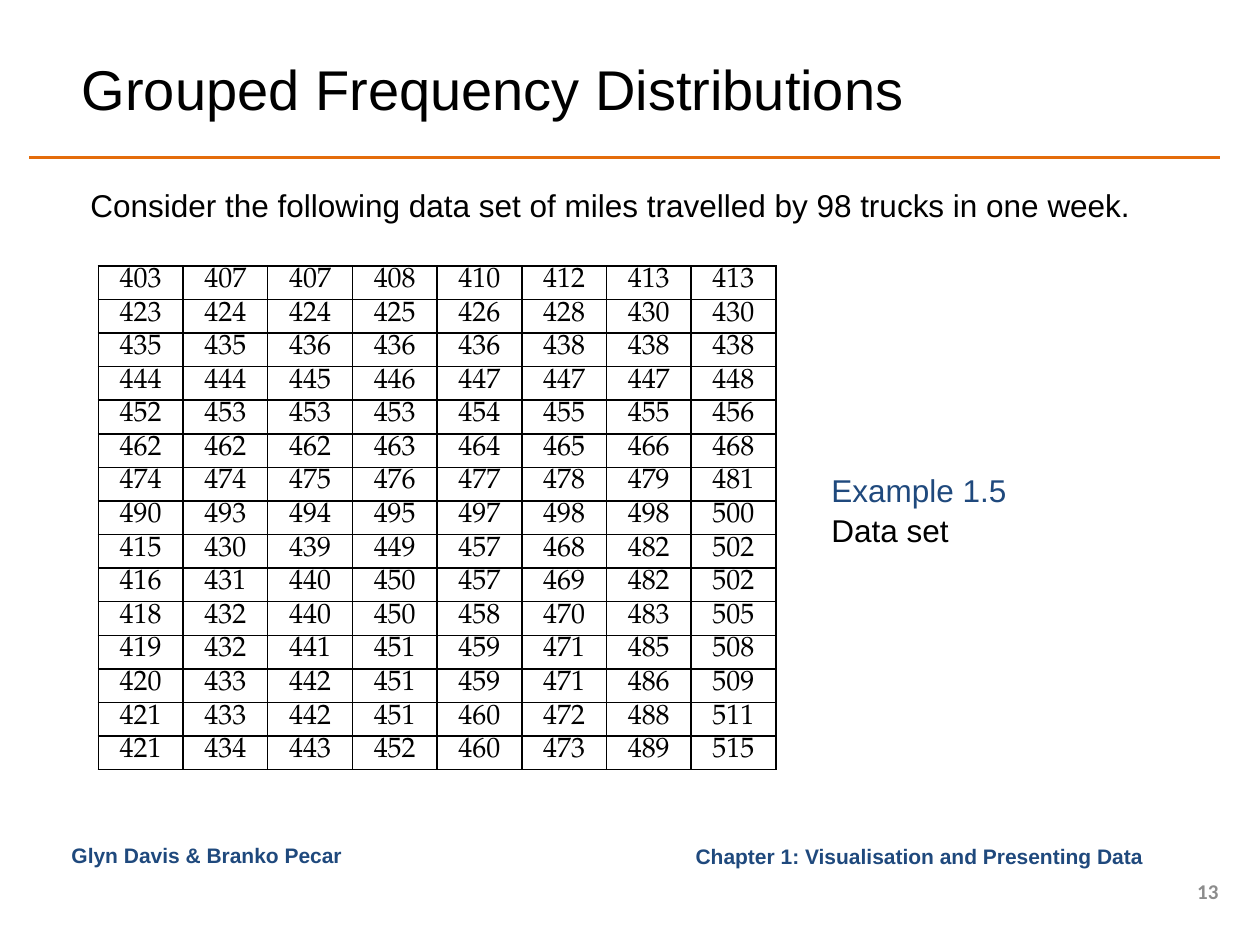
"""Build the slide on grouped frequency distributions."""
from lxml.etree import SubElement
from pptx import Presentation
from pptx.dml.color import RGBColor
from pptx.enum.shapes import MSO_CONNECTOR
from pptx.enum.text import MSO_ANCHOR, PP_ALIGN
from pptx.oxml.ns import qn
from pptx.util import Pt

BLACK = RGBColor(0x00, 0x00, 0x00)
NAVY = RGBColor(0x1F, 0x49, 0x7D)
ORANGE = RGBColor(0xE4, 0x6C, 0x0A)
GREY = RGBColor(0x8C, 0x8C, 0x8C)

MILES = """
403 407 407 408 410 412 413 413
423 424 424 425 426 428 430 430
435 435 436 436 436 438 438 438
444 444 445 446 447 447 447 448
452 453 453 453 454 455 455 456
462 462 462 463 464 465 466 468
474 474 475 476 477 478 479 481
490 493 494 495 497 498 498 500
415 430 439 449 457 468 482 502
416 431 440 450 457 469 482 502
418 432 440 450 458 470 483 505
419 432 441 451 459 471 485 508
420 433 442 451 459 471 486 509
421 433 442 451 460 472 488 511
421 434 443 452 460 473 489 515
"""


def add_span(para, text, size, color, font="Arial", bold=False):
    span = para.add_run()
    span.text = text
    span.font.name = font
    span.font.size = Pt(size)
    span.font.bold = bold
    span.font.color.rgb = color


def add_text(page, left, top, width, height, anchor=MSO_ANCHOR.TOP,
             align=PP_ALIGN.LEFT, spacing=1.0):
    box = page.shapes.add_textbox(Pt(left), Pt(top), Pt(width), Pt(height))
    box.text_frame.word_wrap = True
    box.text_frame.vertical_anchor = anchor
    para = box.text_frame.paragraphs[0]
    para.alignment = align
    para.line_spacing = spacing
    return para


def add_rule(page, left, right, top):
    rule = page.shapes.add_connector(
        MSO_CONNECTOR.STRAIGHT, Pt(left), Pt(top), Pt(right), Pt(top))
    rule.line.color.rgb = ORANGE
    rule.line.width = Pt(2)
    SubElement(rule._element.spPr, qn("a:effectLst"))


def add_borders(cell):
    properties = cell._tc.get_or_add_tcPr()
    for position, side in enumerate(("lnL", "lnR", "lnT", "lnB")):
        line = SubElement(properties, qn(f"a:{side}"), w=str(Pt(1)))
        properties.insert(position, line)
        fill = SubElement(line, qn("a:solidFill"))
        SubElement(fill, qn("a:srgbClr"), val=str(BLACK))


def fill_cell(cell, text):
    cell.fill.background()
    cell.margin_left = cell.margin_right = Pt(5)
    cell.margin_top = cell.margin_bottom = Pt(0)
    para = cell.text_frame.paragraphs[0]
    para.alignment = PP_ALIGN.CENTER
    para.line_spacing = Pt(16.8)
    add_span(para, text, 16, BLACK, "TeX Gyre Pagella")
    add_borders(cell)


def add_data_table(page, rows, left, top, width, height):
    table = page.shapes.add_table(
        len(rows), len(rows[0]), Pt(left), Pt(top), Pt(width), Pt(height)).table
    table.first_row = table.horz_banding = False
    for column in table.columns:
        column.width = Pt(width / len(rows[0]))
    for row, values in zip(table.rows, rows):
        row.height = Pt(height / len(rows))
        for cell, value in zip(row.cells, values):
            fill_cell(cell, value)


def main():
    deck = Presentation()
    deck.slide_width, deck.slide_height = Pt(720), Pt(540)
    page = deck.slides.add_slide(deck.slide_layouts[6])
    middle, right = MSO_ANCHOR.MIDDLE, PP_ALIGN.RIGHT

    add_rule(page, 16.8, 697.4, 90)
    chapter = add_text(page, 337.7, 478, 326, 22.3, middle, right)
    add_span(chapter, "Chapter 1: Visualisation and Presenting Data ", 12, NAVY, bold=True)
    title = add_text(page, 39.6, 22.3, 545.8, 56.2, middle)
    add_span(title, "Grouped Frequency Distributions", 32, BLACK)
    number = add_text(page, 669.6, 500.4, 33.8, 17.3, middle, right)
    add_span(number, "13", 12, GREY, "Calibri", True)
    authors = add_text(page, 33.8, 478, 213.8, 22.3)
    add_span(authors, "Glyn Davis & Branko Pecar", 12, NAVY, bold=True)
    intro = add_text(page, 44.6, 101.5, 652.3, 28.8, spacing=1.06)
    add_span(intro, "Consider the following data set of miles travelled "
             "by 98 trucks in one week.", 18, BLACK)
    rows = [line.split() for line in MILES.strip().splitlines()]
    add_data_table(page, rows, 56.2, 151.9, 387.2, 288)
    example = add_text(page, 468, 264.2, 140.4, 51.1, spacing=1.06)
    add_span(example, "Example 1.5", 18, NAVY)
    add_span(example, " Data set", 18, BLACK)

    deck.save("out.pptx")


if __name__ == "__main__":
    main()
